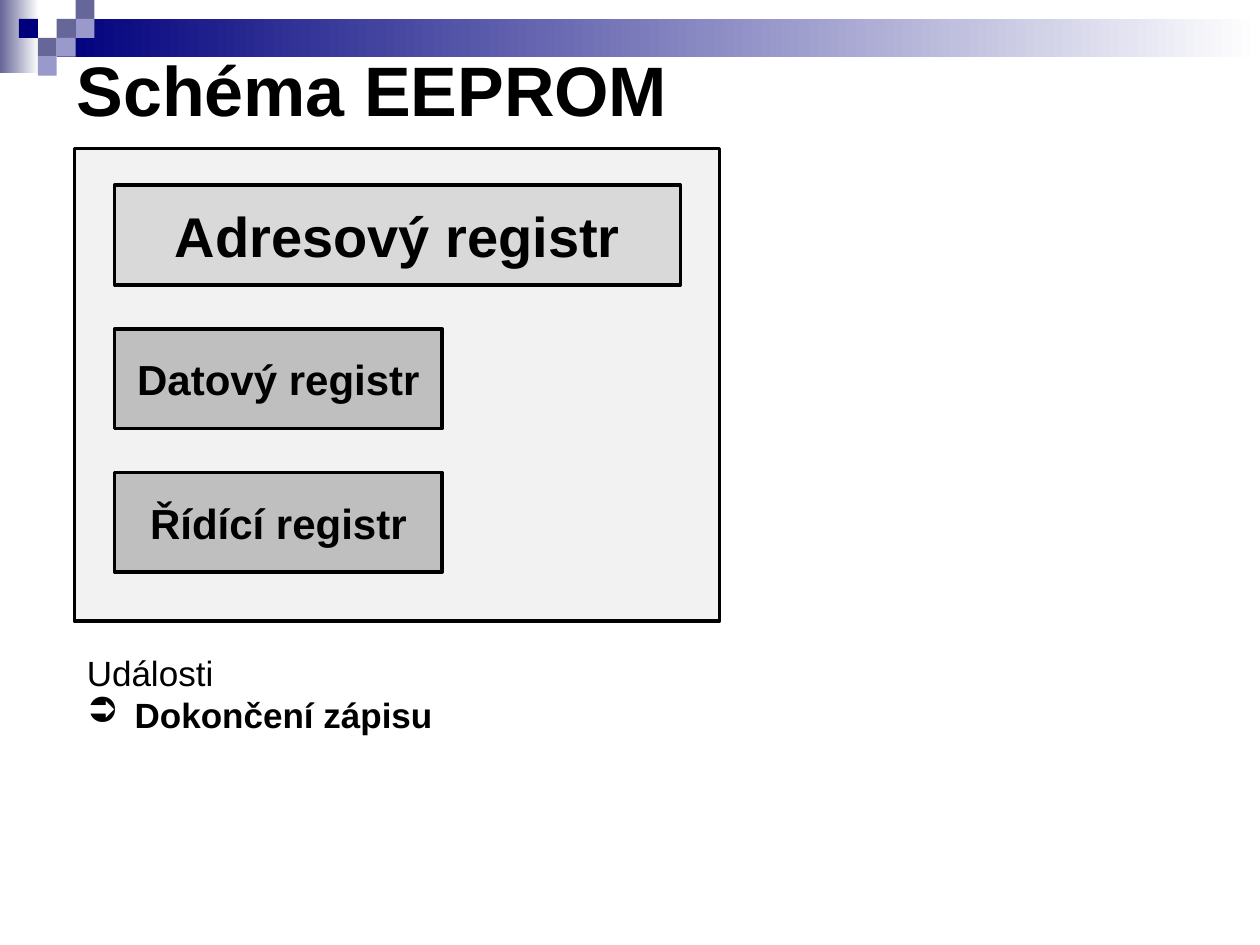
from lxml import etree
from pptx import Presentation
from pptx.dml.color import RGBColor
from pptx.enum.shapes import MSO_SHAPE
from pptx.enum.text import MSO_ANCHOR, PP_ALIGN
from pptx.oxml.ns import qn
from pptx.util import Inches, Pt

RECTANGLE = MSO_SHAPE.RECTANGLE
MIDDLE, TOP = MSO_ANCHOR.MIDDLE, MSO_ANCHOR.TOP
CENTER, LEFT = PP_ALIGN.CENTER, PP_ALIGN.LEFT

FONT = "Arial"
COLORS = {
    "black": "000000", "white": "FFFFFF", "navy": "00007D",
    "slate": "666699", "lavender": "9999CC",
    "chip": "F2F2F2", "address": "D9D9D9", "register": "BFBFBF",
}

TITLE = "Schéma EEPROM"
# label, width, font size, fill
REGISTERS = [
    ("Adresový registr", 4.49, 32, "address"),
    ("Datový registr", 2.6, 24, "register"),
    ("Řídící registr", 2.6, 24, "register"),
]
EVENTS_HEADING = "Události"
EVENTS = ["Dokončení zápisu"]

# left, top, width, height, start colour of the fade to white
BANDS = [(0, 0, 0.31, 0.58, "slate"), (0.45, 0.15, 9.55, 0.3, "navy")]
# column, row, fill
TILES = [
    (3, 1, "slate"), (4, 0, "slate"), (4, 1, "lavender"), (2, 2, "slate"),
    (1, 1, "navy"), (3, 2, "lavender"), (2, 3, "lavender"),
]
TILE = 0.15
CHIP_BOX = (0.59, 1.18, 5.12, 3.75)
REGISTER_LEFT, REGISTER_TOP = 0.91, 1.47
REGISTER_HEIGHT, REGISTER_STEP = 0.79, 1.14
BULLET_INDENT = 0.38


def rgb(name):
    return RGBColor.from_string(COLORS[name])


def add_rectangle(slide, box, fill=None, outlined=False):
    shape = slide.shapes.add_shape(RECTANGLE, *map(Inches, box))
    shape.shadow.inherit = False
    if fill:
        shape.fill.solid()
        shape.fill.fore_color.rgb = rgb(fill)
    if outlined:
        shape.line.color.rgb = rgb("black")
        shape.line.width = Pt(2)
    else:
        shape.line.fill.background()
    return shape


def add_band(slide, box, start):
    fill = add_rectangle(slide, box).fill
    fill.gradient()
    fill.gradient_angle = 0
    for stop, position, color in zip(fill.gradient_stops, (0, 1), (start, "white")):
        stop.position = position
        stop.color.rgb = rgb(color)


def write(paragraph, text, size, bold=True, alignment=LEFT):
    paragraph.text = text
    paragraph.alignment = alignment
    font = paragraph.font
    font.name, font.size, font.bold = FONT, Pt(size), bold
    font.color.rgb = rgb("black")


def add_text_frame(slide, box, anchor):
    frame = slide.shapes.add_textbox(*map(Inches, box)).text_frame
    frame.word_wrap = True
    frame.vertical_anchor = anchor
    return frame


def add_bullet(paragraph, character):
    properties = paragraph._p.get_or_add_pPr()
    properties.set("marL", str(Inches(BULLET_INDENT)))
    properties.set("indent", str(-Inches(BULLET_INDENT)))
    bullet = etree.Element(qn("a:buChar"), char=character)
    defaults = properties.find(qn("a:defRPr"))
    defaults.addprevious(bullet)


def main():
    presentation = Presentation()
    presentation.slide_width, presentation.slide_height = Inches(10), Inches(7.5)
    slide = presentation.slides.add_slide(presentation.slide_layouts[6])

    for *box, start in BANDS:
        add_band(slide, box, start)
    for column, row, fill in TILES:
        add_rectangle(slide, (column * TILE, row * TILE, TILE, TILE), fill)

    title = add_text_frame(slide, (0.51, 0.31, 8.86, 0.79), MIDDLE)
    write(title.paragraphs[0], TITLE, 40)

    add_rectangle(slide, CHIP_BOX, "chip", outlined=True)
    for index, (label, width, size, fill) in enumerate(REGISTERS):
        top = REGISTER_TOP + index * REGISTER_STEP
        box = (REGISTER_LEFT, top, width, REGISTER_HEIGHT)
        frame = add_rectangle(slide, box, fill, outlined=True).text_frame
        frame.vertical_anchor = MIDDLE
        write(frame.paragraphs[0], label, size, alignment=CENTER)

    events = add_text_frame(slide, (0.59, 5.12, 5.12, 0.77), TOP)
    write(events.paragraphs[0], EVENTS_HEADING, 20, bold=False)
    for event in EVENTS:
        paragraph = events.add_paragraph()
        write(paragraph, event, 20)
        add_bullet(paragraph, "➲")

    presentation.save("out.pptx")


if __name__ == "__main__":
    main()
